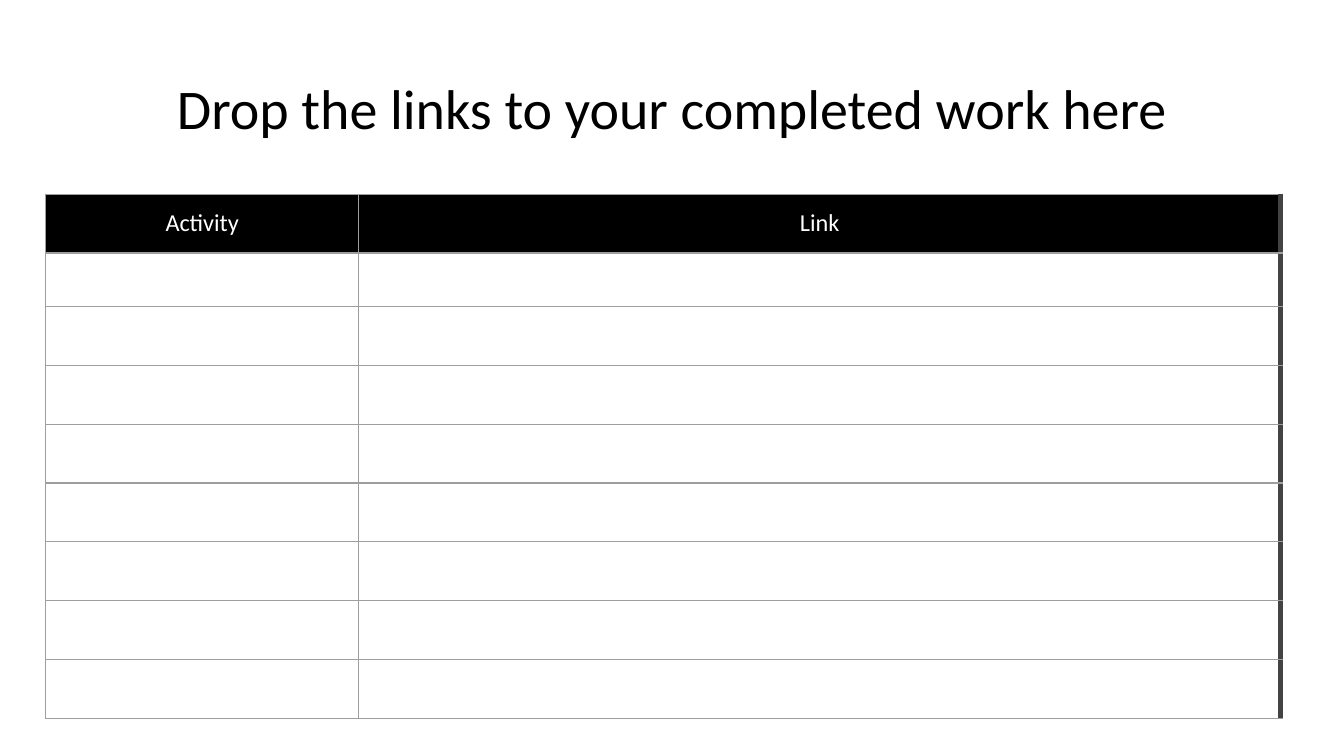
from dataclasses import dataclass

from lxml.etree import SubElement
from pptx import Presentation
from pptx.dml.color import RGBColor
from pptx.enum.text import MSO_ANCHOR, MSO_AUTO_SIZE, PP_ALIGN
from pptx.oxml.ns import qn
from pptx.util import Pt

FONT = "Calibri"
BLACK, WHITE, GREY, DARK = "000000", "FFFFFF", "9E9E9E", "434343"


@dataclass(frozen=True)
class Column:
    heading: str
    width: float
    right_color: str = GREY
    right_width: float = 0.75


COLUMNS = [Column("Activity", 167.76), Column("Link", 493.92, DARK, 3)]
ROW_HEIGHTS = [31.5, 28.8] + [31.5] * 7


def rgb(color: str) -> RGBColor:
    return RGBColor.from_string(color)


def add_run(p, text: str, size: float, color: str) -> None:
    p.alignment = PP_ALIGN.CENTER
    r = p.add_run()
    r.text = text
    r.font.name = FONT
    r.font.size = Pt(size)
    r.font.bold = False
    r.font.color.rgb = rgb(color)


def add_border(cell, side: str, color: str, width: float) -> None:
    ln = SubElement(cell._tc.get_or_add_tcPr(), qn(f"a:ln{side}"), w=str(Pt(width)))
    SubElement(SubElement(ln, qn("a:solidFill")), qn("a:srgbClr"), val=color)


def format_cell(cell, column: Column, is_header: bool) -> None:
    cell.margin_left = cell.margin_right = cell.margin_top = cell.margin_bottom = 0
    cell.vertical_anchor = MSO_ANCHOR.MIDDLE
    for side in "LRTB":
        if side == "R":
            add_border(cell, side, column.right_color, column.right_width)
        else:
            add_border(cell, side, GREY, 0.75)
    if is_header:
        cell.fill.solid()
        cell.fill.fore_color.rgb = rgb(BLACK)
        add_run(cell.text_frame.paragraphs[0], column.heading, 13, WHITE)
    else:
        cell.fill.background()


def add_title(slide, text: str) -> None:
    sp = slide.shapes.title
    sp.left, sp.top, sp.width, sp.height = Pt(0), Pt(32), Pt(720), Pt(32.4)
    tf = sp.text_frame
    tf.word_wrap = True
    tf.auto_size = MSO_AUTO_SIZE.NONE
    tf.vertical_anchor = MSO_ANCHOR.TOP
    tf.margin_left = tf.margin_right = tf.margin_top = tf.margin_bottom = Pt(7.2)
    p = tf.paragraphs[0]
    p.line_spacing = 1.0
    p.space_before = Pt(0)
    add_run(p, text, 30, BLACK)


def add_link_table(slide) -> None:
    width = sum(column.width for column in COLUMNS)
    table = slide.shapes.add_table(
        len(ROW_HEIGHTS), len(COLUMNS),
        Pt(24.4), Pt(104), Pt(width), Pt(sum(ROW_HEIGHTS)),
    ).table
    table.horz_banding = False
    for i, column in enumerate(COLUMNS):
        table.columns[i].width = Pt(column.width)
    for i, height in enumerate(ROW_HEIGHTS):
        table.rows[i].height = Pt(height)
        for j, column in enumerate(COLUMNS):
            format_cell(table.cell(i, j), column, is_header=i == 0)


def main() -> None:
    prs = Presentation()
    prs.slide_width, prs.slide_height = Pt(720), Pt(405)
    slide = prs.slides.add_slide(prs.slide_layouts[5])
    add_title(slide, "Drop the links to your completed work here")
    add_link_table(slide)
    prs.save("out.pptx")


if __name__ == "__main__":
    main()
